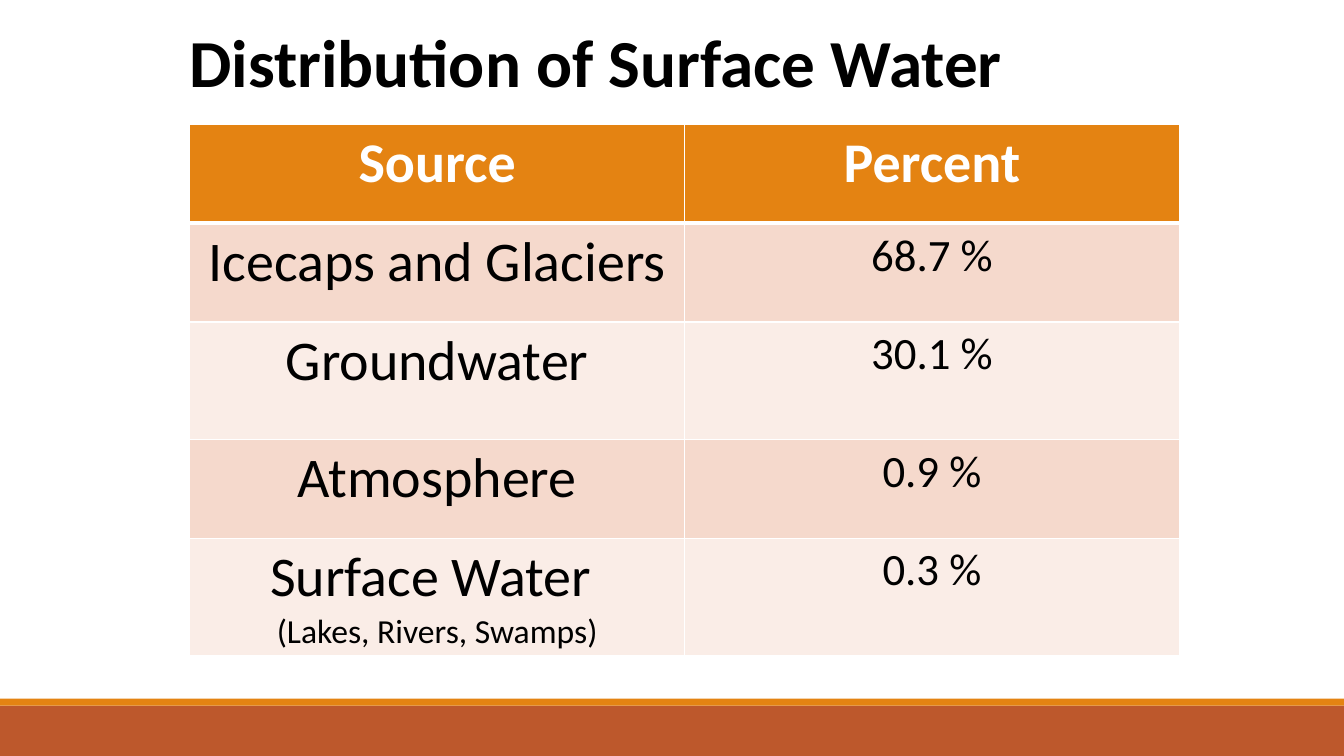
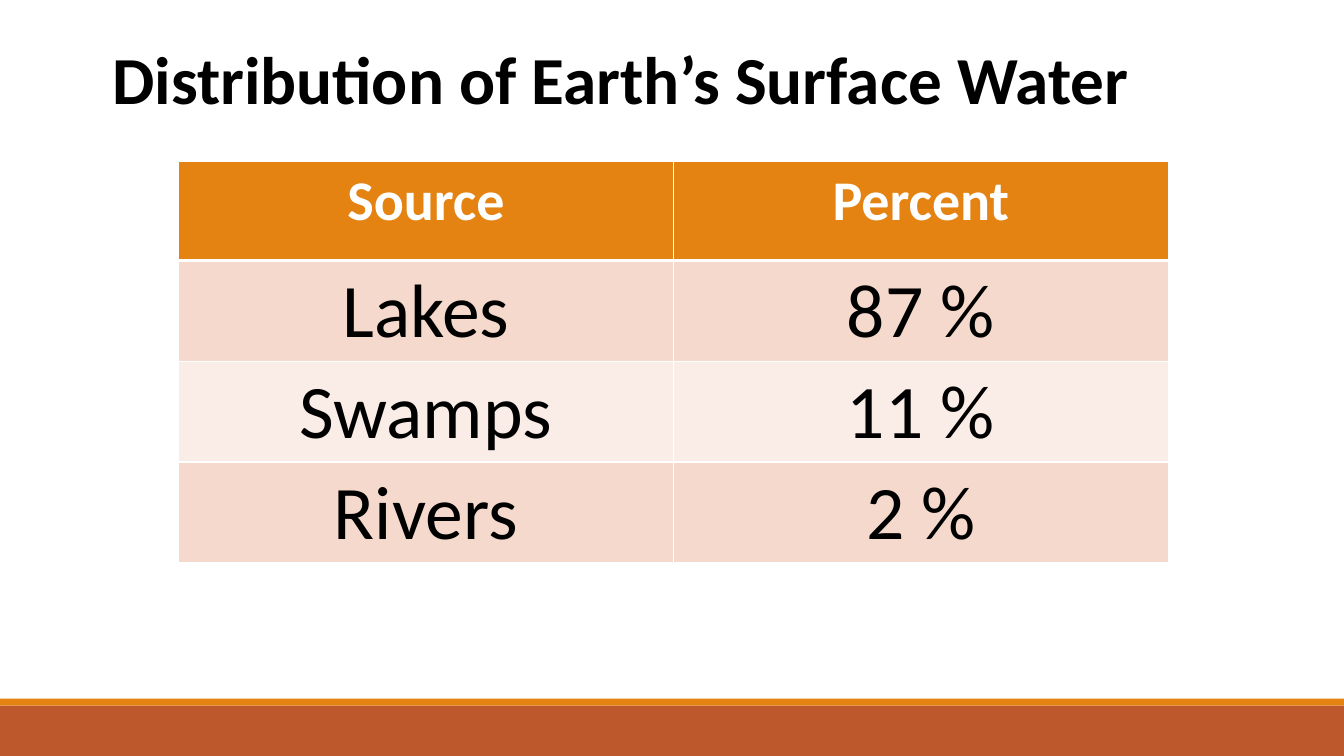
import pptx
import pptx.dml.color
import pptx.enum.shapes
import pptx.enum.text
import pptx.oxml
import pptx.oxml.ns
import pptx.util

Pt = pptx.util.Pt
ALIGN = pptx.enum.text.PP_ALIGN

# Shared look
SLIDE_WIDTH, SLIDE_HEIGHT = 960, 540
FONT = "Calibri"
BLACK, WHITE = "000000", "FFFFFF"
ORANGE, RUST = "E48312", "BD582C"
ROW_TINTS = ("F5D9CC", "FAEDE7")
BANDS = ((504, 36, RUST), (499, 5, ORANGE))
TITLE_HEIGHT = 65.5
COLUMN_WIDTH = 353.5
HEADERS = ("Source", "Percent")
HEADER_SIZE, HEADER_HEIGHT = 40, 70.5
THIN, THICK = 1, 3


def color(value):
    return pptx.dml.color.RGBColor.from_string(value)


def write(paragraph, text, *, size, ink=BLACK, bold=False, align=ALIGN.CENTER):
    paragraph.alignment = align
    run = paragraph.add_run()
    run.text = text
    run.font.name = FONT
    run.font.size = Pt(size)
    run.font.bold = bold
    run.font.color.rgb = color(ink)


def add_master_bands(presentation, slide):
    """Draw the footer bands and move them to the master, behind its placeholders."""
    master_tree = presentation.slide_master.shapes.element
    for index, (top, height, fill) in enumerate(BANDS):
        band = slide.shapes.add_shape(
            pptx.enum.shapes.MSO_SHAPE.RECTANGLE, 0, Pt(top), Pt(SLIDE_WIDTH), Pt(height))
        band.shadow.inherit = False
        band.fill.solid()
        band.fill.fore_color.rgb = color(fill)
        band.line.fill.background()
        band.element.nvSpPr.cNvPr.set("id", str(100 + index))
        master_tree.insert(2 + index, band.element)


def set_title(slide, text, left, top, width):
    title = slide.shapes.title
    title.left, title.top = Pt(left), Pt(top)
    title.width, title.height = Pt(width), Pt(TITLE_HEIGHT)
    frame = title.text_frame
    frame.word_wrap = False
    frame.auto_size = pptx.enum.text.MSO_AUTO_SIZE.SHAPE_TO_FIT_TEXT
    frame.vertical_anchor = pptx.enum.text.MSO_ANCHOR.TOP
    write(frame.paragraphs[0], text, size=48, bold=True, align=ALIGN.LEFT)


def set_borders(cell, top, bottom):
    properties = cell._tc.get_or_add_tcPr()
    for side, width in (("L", THIN), ("R", THIN), ("T", top), ("B", bottom)):
        properties.append(pptx.oxml.parse_xml(
            f'<a:ln{side} {pptx.oxml.ns.nsdecls("a")} w="{Pt(width)}">'
            f'<a:solidFill><a:srgbClr val="{WHITE}"/></a:solidFill></a:ln{side}>'))


def fill_cell(cell, lines, fill, top=THIN, bottom=THIN, **text_format):
    """Write (text, size) lines into a bordered, filled cell."""
    set_borders(cell, top, bottom)
    cell.fill.solid()
    cell.fill.fore_color.rgb = color(fill)
    frame = cell.text_frame
    for index, (text, size) in enumerate(lines):
        paragraph = frame.add_paragraph() if index else frame.paragraphs[0]
        write(paragraph, text, size=size, **text_format)


def add_source_table(slide, left, top, rows):
    """Each row is (height, source lines, percent lines)."""
    heights = [HEADER_HEIGHT] + [row[0] for row in rows]
    table = slide.shapes.add_table(
        len(heights), len(HEADERS), Pt(left), Pt(top),
        Pt(COLUMN_WIDTH * len(HEADERS)), Pt(sum(heights))).table
    for column in table.columns:
        column.width = Pt(COLUMN_WIDTH)
    for table_row, height in zip(table.rows, heights):
        table_row.height = Pt(height)
    for column, header in enumerate(HEADERS):
        fill_cell(table.cell(0, column), [(header, HEADER_SIZE)], ORANGE,
                  bottom=THICK, ink=WHITE, bold=True)
    for index, (_, *cells) in enumerate(rows):
        for column, lines in enumerate(cells):
            fill_cell(table.cell(index + 1, column), lines, ROW_TINTS[index % 2],
                      top=THIN if index else THICK)


def main():
    presentation = pptx.Presentation()
    presentation.slide_width = Pt(SLIDE_WIDTH)
    presentation.slide_height = Pt(SLIDE_HEIGHT)
    title_only = presentation.slide_layouts.get_by_name("Title Only")

    # Slide 1: sources of water
    slide = presentation.slides.add_slide(title_only)
    add_master_bands(presentation, slide)
    set_title(slide, "Distribution of Surface Water", 128, 11, 602)
    add_source_table(slide, 135.5, 89, [
        (70.5, [("Icecaps and Glaciers", 40)], [("68.7 %", 32)]),
        (84, [("Groundwater", 40)], [("30.1 %", 32)]),
        (70.5, [("Atmosphere", 40)], [("0.9 %", 32)]),
        (84, [("Surface Water ", 40), ("(Lakes, Rivers, Swamps)", 24)], [("0.3 %", 32)]),
    ])

    # Slide 2: surface water by kind
    slide = presentation.slides.add_slide(title_only)
    set_title(slide, "Distribution of Earth’s Surface Water", 73, 23, 749)
    shares = (("Lakes", "87 %"), ("Swamps", "11 %"), ("Rivers", "2 %"))
    add_source_table(slide, 127.5, 115.5, [
        (72, [(source, 54)], [(percent, 54)]) for source, percent in shares])

    presentation.save("out.pptx")


if __name__ == "__main__":
    main()
